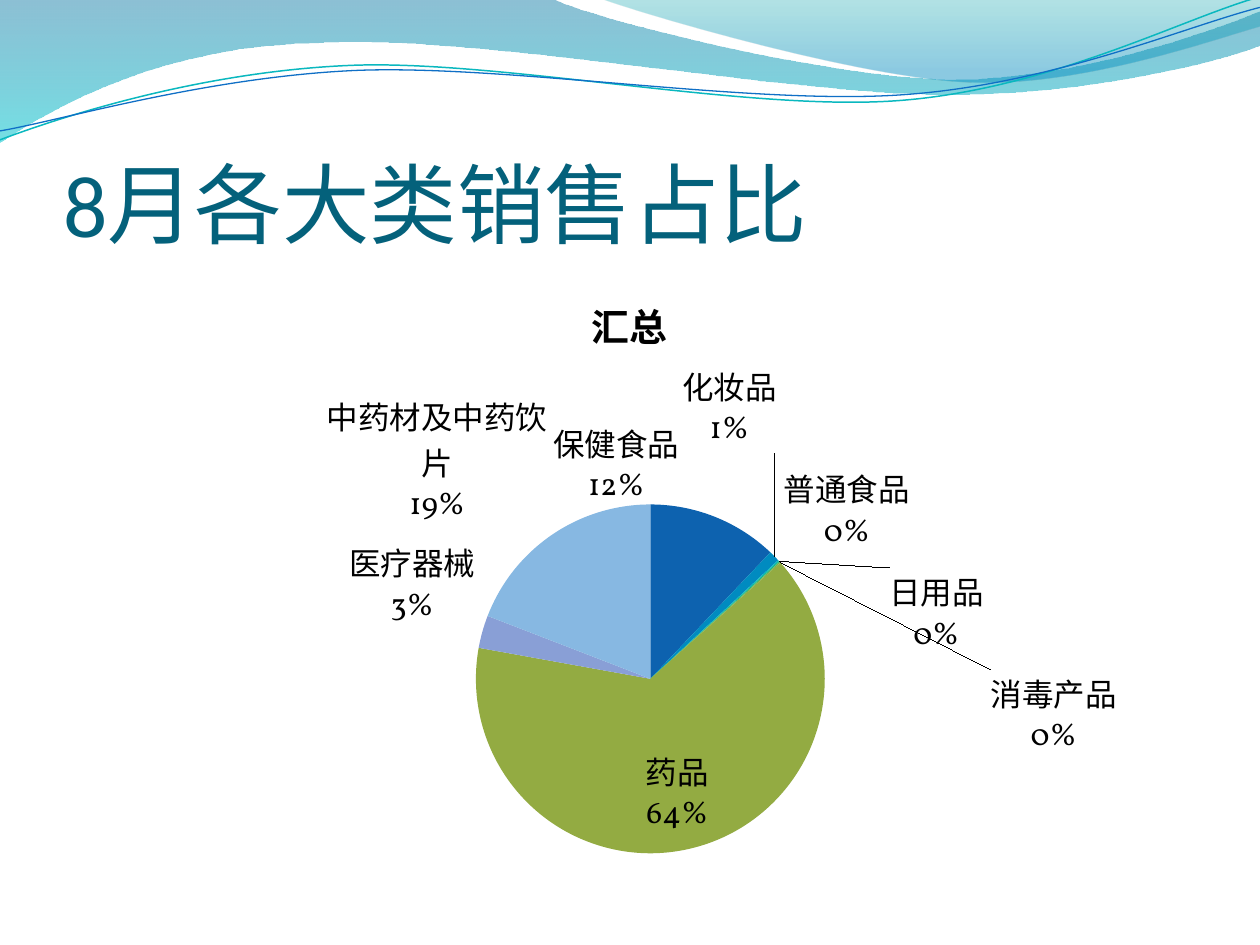
import pptx
import pptx.chart.data
import pptx.dml.color
import pptx.enum.chart
import pptx.enum.text
import pptx.oxml
import pptx.util
from pptx.util import Cm

TITLE = "8月各大类销售占比"
CHART_TITLE = "汇总"
TRACE = 0.1  # rounds to 0 %, yet keeps the slice and its label
# category, share, slice colour, label position, label shift (percent of the chart)
CATEGORIES = [
    ("保健食品", 12, "0D62AF", "outEnd", (-14.5, 0)),
    ("化妆品", 1, "008BC0", "outEnd", (-8.6, -16.2)),
    ("普通食品", TRACE, "0BB8C0", "outEnd", None),
    ("日用品", TRACE, "10B789", "outEnd", (9.2, 16.9)),
    ("消毒产品", TRACE, "6EB357", "outEnd", (18.1, 33.6)),
    ("药品", 64, "93AB42", "ctr", (0.3, 5)),
    ("医疗器械", 3, "899FD6", "bestFit", None),
    ("中药材及中药饮片", 19, "87B8E2", "bestFit", None),
    ("(空白)", None, "0BD0D9", None, None),
]
THEME = {
    "title_font": "Calibri", "title_size": 50, "title_color": "04617B",
    "chart_font": "Vollkorn", "label_size": 18, "heading_size": 21.6, "text": "000000",
}
# Outlines in cm: one point is a straight step, three points are a Bezier step.
# Gradient stops: position, colour, opacity in percent.
WAVES = [
    {"start": (0, 0), "steps": [
        [(11.18, 0)],
        [(12.09, 0.43), (16.87, 1.6), (19.25, 1.6)],
        [(21.67, 1.6), (24.33, 0.66), (25.4, 0.23)],
        [(25.4, 0.91)],
        [(24.97, 1.12), (22.1, 1.93), (18.95, 1.9)],
        [(15.8, 1.9), (9.7, 0.71), (6.53, 0.86)],
        [(3.28, 0.91), (1.17, 2.11), (0, 2.87)]],
     "gradient": [(0, "0074A1", 45), (1, "00C6CF", 55)]},
    {"start": (12.17, 0), "steps": [
        [(12.93, 0.28), (17.32, 1.57), (19.53, 1.65)],
        [(21.74, 1.75), (24.41, 0.81), (25.4, 0.53)],
        [(25.4, 0)]],
     "gradient": [(0, "00A1A9", 30), (0.8, "008BBF", 45)]},
    {"start": (0, 2.82), "steps": [
        [(1.22, 2.36), (4.01, 1.45), (7.04, 1.32)],
        [(10.03, 1.19), (15.06, 2.26), (18.11, 2.03)],
        [(21.16, 1.8), (23.83, 0.38), (25.35, -0.05)]],
     "line": ("0AB8BF", 0.85)},
    {"start": (0, 2.64), "steps": [
        [(1.19, 2.44), (4.17, 1.55), (7.19, 1.42)],
        [(10.24, 1.3), (15.16, 2.13), (18.21, 1.91)],
        [(21.23, 1.7), (23.9, 0.53), (25.4, 0.15)]],
     "line": ("0F6FC6", 0.75)},
]
CHART_NS = 'xmlns:c="http://schemas.openxmlformats.org/drawingml/2006/chart"'
qn = pptx.oxml.ns.qn


def rgb(color):
    return pptx.dml.color.RGBColor.from_string(color)


def write(text_frame, text, *, font, size, color, bold=False):
    text_frame.text = text
    style(text_frame.paragraphs[0].runs[0].font, font, size, color, bold)


def style(target, font, size, color, bold=False):
    target.name, target.size, target.bold = font, pptx.util.Pt(size), bold
    target.color.rgb = rgb(color)


def bend(shape, steps):
    """Turn each run of three straight steps that belongs to a curve into one Bezier step."""
    lines = iter(list(shape._element.iter(qn("a:lnTo"))))
    for step in steps:
        parts = [next(lines) for _ in step]
        if len(parts) == 3:
            curve = parts[0].makeelement(qn("a:cubicBezTo"), {})
            parts[0].addprevious(curve)
            for part in parts:
                curve.append(part[0])
                part.getparent().remove(part)


def add_wave(slide, wave):
    closed = "gradient" in wave
    x, y = wave["start"]
    builder = slide.shapes.build_freeform(Cm(x), Cm(y))
    builder.add_line_segments([(Cm(px), Cm(py)) for step in wave["steps"] for px, py in step],
                              close=closed)
    shape = builder.convert_to_shape()
    bend(shape, wave["steps"])
    shape.shadow.inherit = False
    if not closed:
        color, width = wave["line"]
        shape.fill.background()
        shape.line.color.rgb = rgb(color)
        shape.line.width = pptx.util.Pt(width)
        return
    shape.line.fill.background()
    shape.fill.gradient()
    shape.fill.gradient_angle = 270
    for stop, (position, color, _) in zip(shape.fill.gradient_stops, wave["gradient"]):
        stop.position = position
        stop.color.rgb = rgb(color)
    for node, (_, _, opacity) in zip(shape._element.spPr.iter(qn("a:srgbClr")), wave["gradient"]):
        node.append(node.makeelement(qn("a:alpha"), {"val": str(opacity * 1000)}))


def manual_layout(**values):
    items = "".join(f'<c:{name} val="{value}"/>' for name, value in values.items())
    return f"<c:layout {CHART_NS}><c:manualLayout>{items}</c:manualLayout></c:layout>"


def flags(on):
    shown = {"LegendKey": 0, "Val": 0, "CatName": on, "SerName": 0, "Percent": on, "BubbleSize": 0}
    return "".join(f'<c:show{name} val="{value}"/>' for name, value in shown.items())


def label_xml():
    labels = ""
    for i, (_, _, _, position, shift) in enumerate(CATEGORIES):
        if position:
            layout = manual_layout(x=shift[0] / 100, y=shift[1] / 100) if shift else ""
            labels += (f'<c:dLbl><c:idx val="{i}"/>{layout}'
                       f'<c:numFmt formatCode="0%" sourceLinked="0"/>'
                       f'<c:dLblPos val="{position}"/>{flags(1)}'
                       f'<c:separator>\n</c:separator></c:dLbl>')
    return (f'<c:dLbls {CHART_NS}>{labels}{flags(0)}'
            f'<c:showLeaderLines val="1"/></c:dLbls>')


def add_sales_chart(slide):
    data = pptx.chart.data.CategoryChartData()
    data.categories = [row[0] for row in CATEGORIES]
    data.add_series(CHART_TITLE, [row[1] for row in CATEGORIES])
    chart = slide.shapes.add_chart(pptx.enum.chart.XL_CHART_TYPE.PIE, Cm(1.27), Cm(5.38),
                                   Cm(22.86), Cm(12.19), data).chart
    chart.has_legend = False
    style(chart.font, THEME["chart_font"], THEME["label_size"], THEME["text"])
    chart.has_title = True
    write(chart.chart_title.text_frame, CHART_TITLE, font=THEME["chart_font"],
          size=THEME["heading_size"], color=THEME["text"], bold=True)
    plot = chart.plots[0]
    plot.vary_by_categories = True
    series = plot.series[0]
    for i, (_, _, color, _, _) in enumerate(CATEGORIES):
        fill = series.points[i].format.fill
        fill.solid()
        fill.fore_color.rgb = rgb(color)
    series._element.find(qn("c:cat")).addprevious(pptx.oxml.parse_xml(label_xml()))
    plot_area = plot._element.getparent()
    for layout in plot_area.findall(qn("c:layout")):
        plot_area.remove(layout)
    plot_area.insert(0, pptx.oxml.parse_xml(manual_layout(
        layoutTarget="inner", xMode="edge", yMode="edge", x=0.364, y=0.393, w=0.308, h=0.577)))


def main():
    presentation = pptx.Presentation()
    presentation.slide_width, presentation.slide_height = Cm(25.4), Cm(19.05)
    slide = presentation.slides.add_slide(presentation.slide_layouts[5])
    for wave in WAVES:
        add_wave(slide, wave)
    title = slide.shapes.title
    title._element.getparent().append(title._element)
    title.left, title.top, title.width, title.height = Cm(1.27), Cm(1.96), Cm(22.86), Cm(3.18)
    frame = title.text_frame
    frame.margin_left = frame.margin_right = frame.margin_bottom = 0
    frame.vertical_anchor = pptx.enum.text.MSO_ANCHOR.BOTTOM
    write(frame, TITLE, font=THEME["title_font"], size=THEME["title_size"],
          color=THEME["title_color"])
    frame.paragraphs[0].alignment = pptx.enum.text.PP_ALIGN.LEFT
    add_sales_chart(slide)
    presentation.save("out.pptx")


if __name__ == "__main__":
    main()
